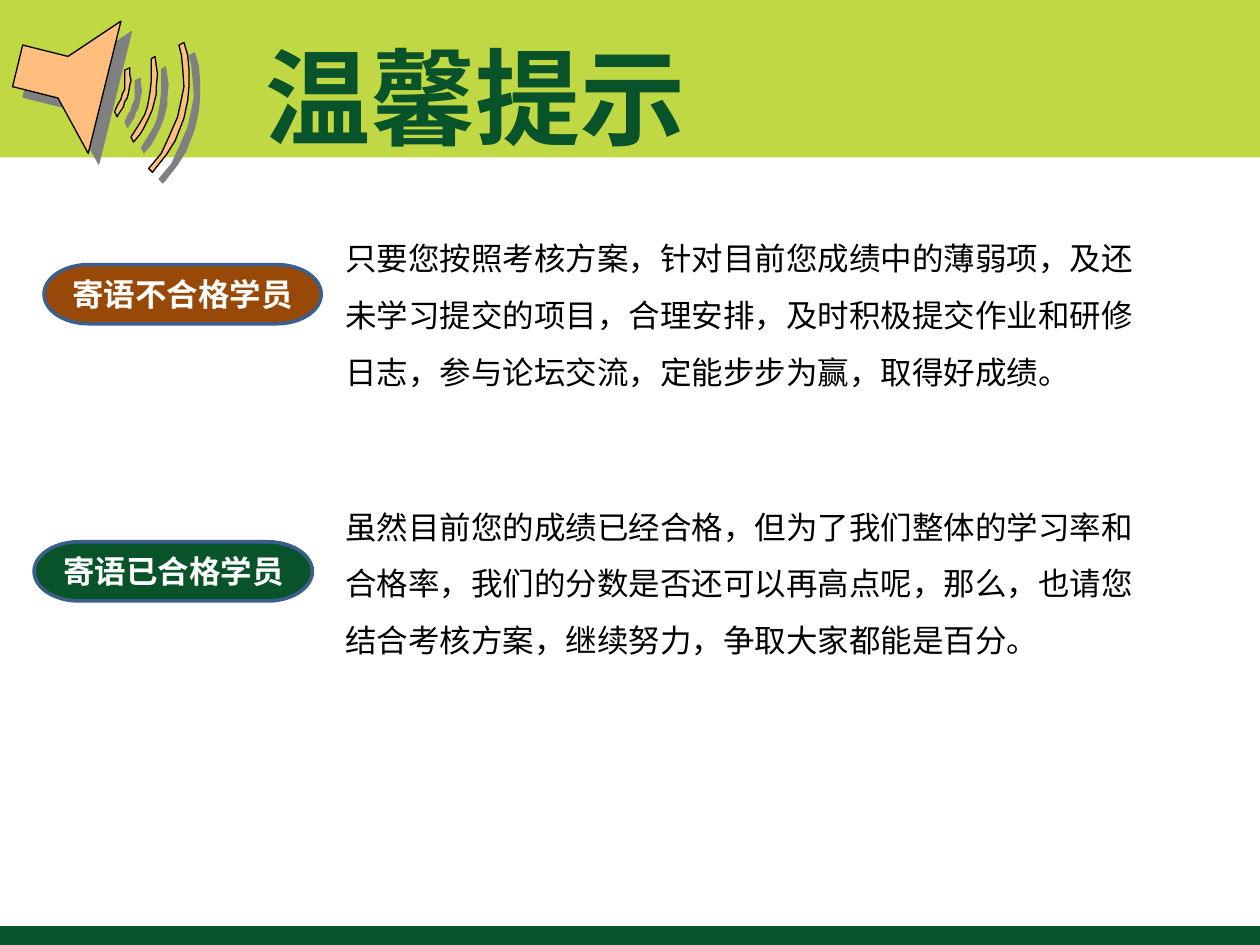
from dataclasses import dataclass
from math import cos, radians, sin

from lxml import etree
from pptx import Presentation
from pptx.dml.color import RGBColor
from pptx.enum.shapes import MSO_SHAPE
from pptx.enum.text import MSO_ANCHOR, MSO_AUTO_SIZE, PP_ALIGN
from pptx.oxml.ns import qn
from pptx.shapes.autoshape import Shape
from pptx.slide import Slide
from pptx.text.text import TextFrame
from pptx.util import Inches, Pt

RECTANGLE = MSO_SHAPE.RECTANGLE
TERMINATOR = MSO_SHAPE.FLOWCHART_TERMINATOR
MIDDLE = MSO_ANCHOR.MIDDLE
NO_AUTOFIT = MSO_AUTO_SIZE.NONE
GROW = MSO_AUTO_SIZE.SHAPE_TO_FIT_TEXT
LEFT, CENTER = PP_ALIGN.LEFT, PP_ALIGN.CENTER

LIME = RGBColor(0xBF, 0xD8, 0x44)
GREEN = RGBColor(0x09, 0x53, 0x2A)
BROWN = RGBColor(0x98, 0x48, 0x07)
BLUE = RGBColor(0x3A, 0x5F, 0x8C)
PEACH = RGBColor(0xFF, 0xBE, 0x7D)
GRAY = RGBColor(0x80, 0x80, 0x80)
BLACK = RGBColor(0, 0, 0)
WHITE = RGBColor(0xFF, 0xFF, 0xFF)

FONT = "Noto Sans CJK SC"
COLUMNS, ROWS = 100, 75
SLIDE_WIDTH, SLIDE_HEIGHT = Inches(10), Inches(7.5)
CELL = SLIDE_WIDTH // COLUMNS

SPEAKER_ANGLE = 14
SPEAKER_CENTER = (8, 7)
SPEAKER_OUTLINES = (
    ((1.8, 3.6), (5.4, 4.5), (9.6, 1.7), (7, 12.2), (4.6, 7.8), (1, 6.9)),
    ((9.9, 5.6), (10.3, 5.4), (10.3, 5.9), (10.4, 6.4), (10.3, 6.8),
     (10.2, 7.4), (10.1, 7.8), (9.9, 8.1), (9.8, 8.5), (9.6, 8.8),
     (9.4, 9.1), (9.3, 9.3), (9.1, 8.9), (9.3, 8.4), (9.6, 7.9),
     (9.7, 7.5), (9.9, 7.1), (9.9, 6.7), (9.9, 6.3), (9.9, 6)),
    ((12.3, 4.5), (12.4, 5.2), (12.5, 5.9), (12.4, 7), (12.4, 7.5),
     (12.1, 8.7), (11.8, 9.4), (11.4, 10.2), (11.1, 10.7), (10.6, 11.3),
     (10.4, 10.9), (11.1, 9.8), (11.5, 9.1), (11.7, 8.5), (11.9, 7.4),
     (12, 6.5), (12, 5.8), (12, 5.3), (12, 4.7)),
    ((14.2, 3.6), (14.6, 3.4), (14.9, 4.4), (15, 5.5), (15, 6.9),
     (14.9, 8), (14.6, 9.4), (13.9, 11.2), (13.2, 12.3), (12.1, 13.7),
     (11.8, 13.4), (12.8, 12.2), (13.4, 10.9), (14.1, 9.3), (14.4, 7.9),
     (14.6, 6.9), (14.5, 5.4), (14.4, 4.4)),
)


@dataclass(frozen=True)
class Area:
    column: float
    row: float
    columns: float
    rows: float

    def lengths(self) -> tuple[int, ...]:
        return tuple(round(value * CELL) for value in
                     (self.column, self.row, self.columns, self.rows))


@dataclass(frozen=True)
class Message:
    label: str
    label_area: Area
    color: RGBColor
    advice: str
    advice_area: Area


BANDS = ((Area(0, 0, COLUMNS, 12.5), LIME), (Area(0, 73.5, COLUMNS, 1.5), GREEN))
MESSAGES = (
    Message(
        "寄语不合格学员", Area(3.5, 21, 22, 4.7), BROWN,
        "只要您按照考核方案，针对目前您成绩中的薄弱项，及还未学习提交的项目，"
        "合理安排，及时积极提交作业和研修日志，参与论坛交流，定能步步为赢，取得好成绩。",
        Area(26.4, 17, 64.6, 14.6)),
    Message(
        "寄语已合格学员", Area(2.7, 43, 22.1, 4.7), GREEN,
        "虽然目前您的成绩已经合格，但为了我们整体的学习率和合格率，"
        "我们的分数是否还可以再高点呢，那么，也请您结合考核方案，继续努力，争取大家都能是百分。",
        Area(26.4, 38.3, 65, 14.6)),
)


def write(text_frame: TextFrame, text: str, size: float, color: RGBColor,
          bold: bool, alignment: PP_ALIGN) -> None:
    text_frame.text = text
    text_frame.word_wrap = True
    paragraph = text_frame.paragraphs[0]
    paragraph.alignment = alignment
    font = paragraph.runs[0].font
    font.name, font.size, font.bold = FONT, Pt(size), bold
    font.color.rgb = color
    properties = paragraph.runs[0]._r.get_or_add_rPr()
    etree.SubElement(properties, qn("a:ea"), typeface=FONT)


def add_filled_shape(slide: Slide, kind: MSO_SHAPE, area: Area,
                     color: RGBColor) -> Shape:
    shape = slide.shapes.add_shape(kind, *area.lengths())
    shape.shadow.inherit = False
    shape.fill.solid()
    shape.fill.fore_color.rgb = color
    shape.line.fill.background()
    return shape


def add_message(slide: Slide, message: Message) -> None:
    label = add_filled_shape(slide, TERMINATOR, message.label_area, message.color)
    label.line.color.rgb = BLUE
    label.line.width = Pt(2)
    label.text_frame.vertical_anchor = MIDDLE
    write(label.text_frame, message.label, 18, WHITE, True, CENTER)

    advice = slide.shapes.add_textbox(*message.advice_area.lengths())
    write(advice.text_frame, message.advice, 18, BLACK, False, LEFT)
    advice.text_frame.auto_size = GROW
    advice.text_frame.paragraphs[0].line_spacing = 1.5


def unrotate(point: tuple[float, float]) -> tuple[int, int]:
    angle = radians(SPEAKER_ANGLE)
    center_x, center_y = SPEAKER_CENTER
    x, y = point[0] - center_x, point[1] - center_y
    return (round((center_x + x * cos(angle) + y * sin(angle)) * CELL),
            round((center_y - x * sin(angle) + y * cos(angle)) * CELL))


def add_speaker(slide: Slide) -> None:
    outlines = [[unrotate(point) for point in outline]
                for outline in SPEAKER_OUTLINES]
    builder = slide.shapes.build_freeform(*outlines[0][0])
    for outline in outlines:
        if outline is not outlines[0]:
            builder.move_to(*outline[0])
        builder.add_line_segments(outline[1:], close=True)
    speaker = builder.convert_to_shape()
    speaker.rotation = SPEAKER_ANGLE
    speaker.fill.solid()
    speaker.fill.fore_color.rgb = PEACH
    speaker.line.color.rgb = BLACK
    speaker.line.width = Pt(0.75)
    speaker.shadow.inherit = False
    effects = speaker._element.spPr.find(qn("a:effectLst"))
    shadow = etree.SubElement(effects, qn("a:outerShdw"), dist=str(Pt(8.5)),
                              dir=str(45 * 60000), algn="ctr", rotWithShape="0")
    etree.SubElement(shadow, qn("a:srgbClr"), val=str(GRAY))


def place_title(slide: Slide) -> None:
    title = slide.shapes.title
    title.left, title.top, title.width, title.height = Area(20.1, 2.8, 68, 9.5).lengths()
    write(title.text_frame, "温馨提示", 60, GREEN, True, LEFT)
    title.text_frame.vertical_anchor = MIDDLE
    title.text_frame.auto_size = NO_AUTOFIT
    title._element.getparent().append(title._element)


def main() -> None:
    presentation = Presentation()
    presentation.slide_width = SLIDE_WIDTH
    presentation.slide_height = SLIDE_HEIGHT
    slide = presentation.slides.add_slide(presentation.slide_layouts[5])
    for area, color in BANDS:
        add_filled_shape(slide, RECTANGLE, area, color)
    for message in MESSAGES:
        add_message(slide, message)
    add_speaker(slide)
    place_title(slide)
    presentation.save("out.pptx")


if __name__ == "__main__":
    main()
